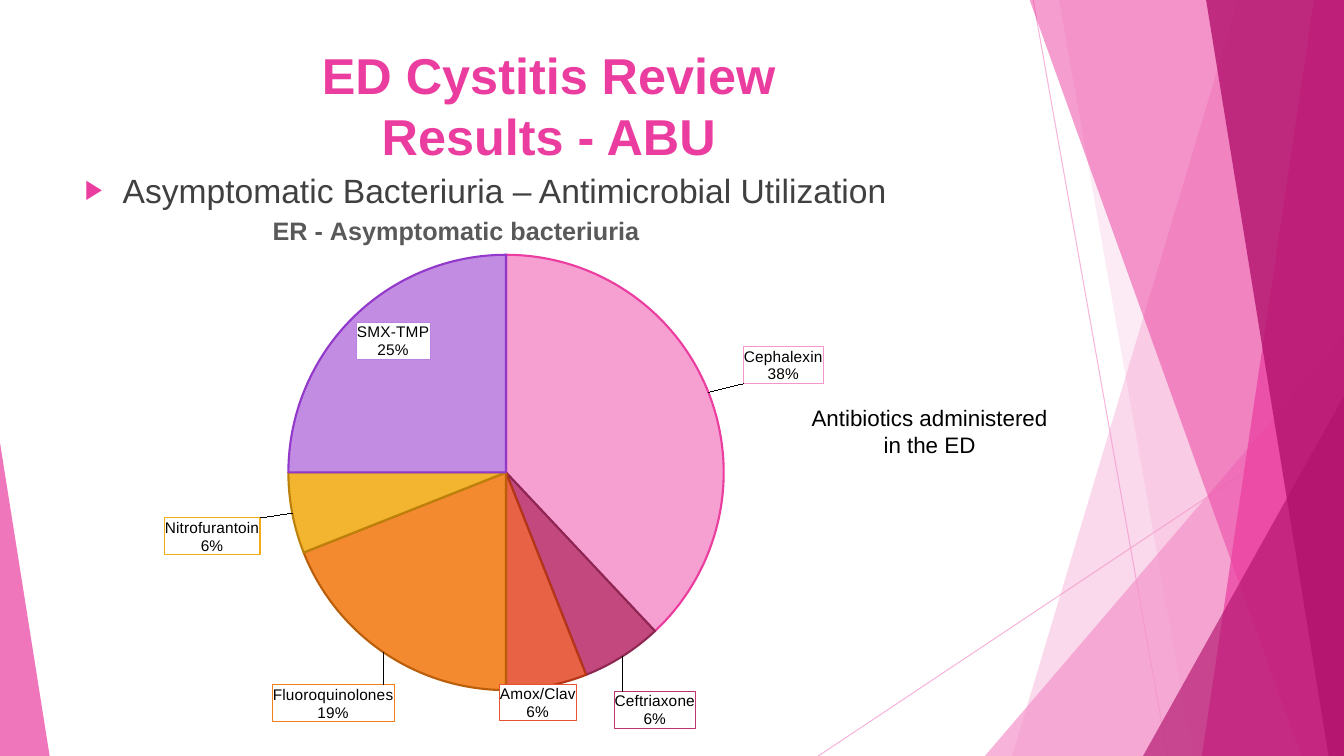
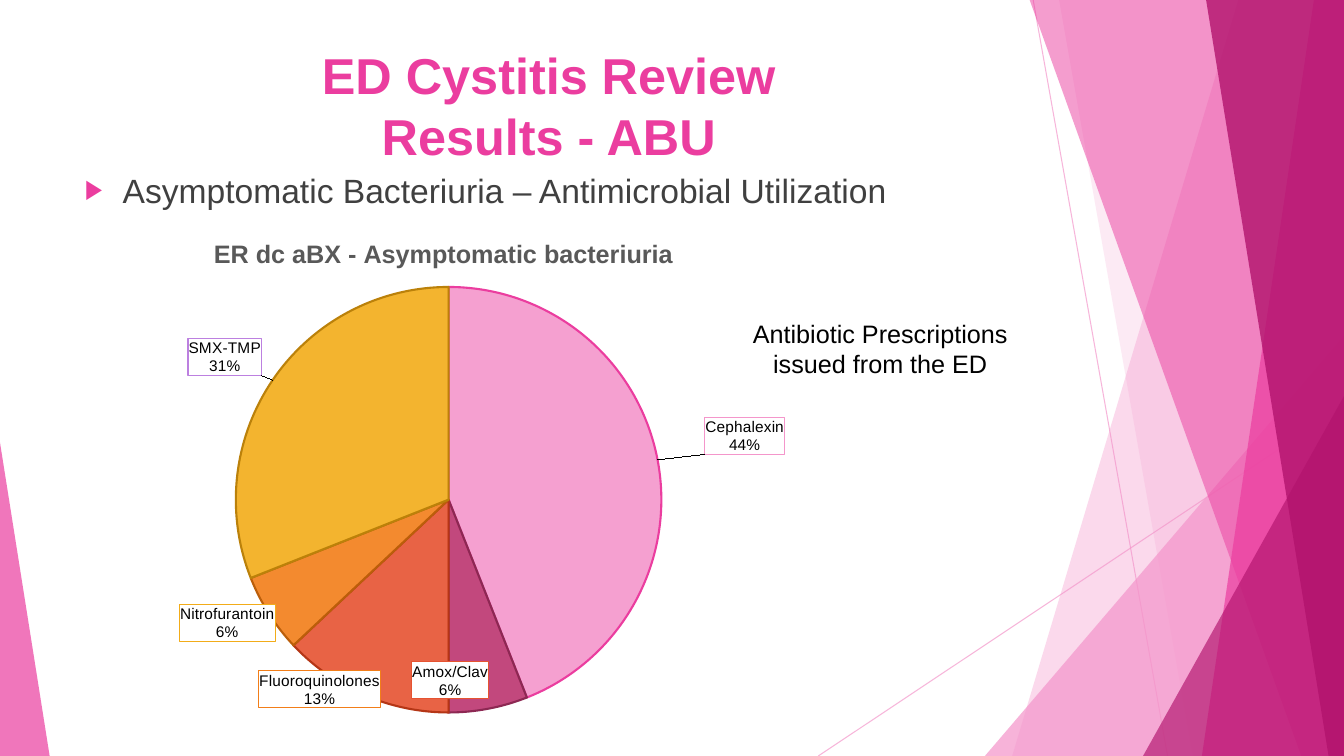
from dataclasses import dataclass
from typing import NamedTuple, Optional

from pptx import Presentation
from pptx import util as u
from pptx.chart import data as chart_data
from pptx.dml import color
from pptx.enum import chart as charts, shapes, text
from pptx.oxml import parse_xml
from pptx.oxml.ns import nsdecls, qn

Pt = u.Pt
WIDTH, HEIGHT = 960, 540
FONT = "Arial"
LIGHT, PINK, DEEP = "F496CB", "EB3D9F", "B2136D"
BODY, CAPTION, BLACK, WHITE = "404040", "595959", "000000", "FFFFFF"


class Box(NamedTuple):
    left: float
    top: float
    width: float
    height: float

    def lengths(self) -> list:
        return [Pt(value) for value in self]


class Ray(NamedTuple):
    x1: float
    y1: float
    x2: float
    y2: float


class Band(NamedTuple):
    """A band whose slanted left edge runs down the slide; it ends at the right edge."""
    top_x: float
    bottom_x: float
    hue: str
    opacity: int


class Wedge(NamedTuple):
    box: Box
    apex: float
    hue: str
    opacity: int


class Slice(NamedTuple):
    drug: str
    percent: int
    shift: Optional[tuple] = None  # label shift in points


@dataclass
class PieSlide:
    heading: str
    heading_at: tuple
    frame: Box
    centre: tuple
    diameter: float
    slices: list
    note: str
    note_box: Box
    note_size: int


RAYS = [Ray(738, 0, 834, 540), Ray(960, 290, 584.5, 540)]
FACETS = [
    Band(884.5, 723, LIGHT, 36),
    Band(756.5, 852, LIGHT, 20),
    Wedge(Box(703.5, 240, 256.5, 300), 1, LIGHT, 72),
    Band(735.5, 929.5, PINK, 50),
    Band(938.5, 858.5, PINK, 70),
    Band(861.5, 949, DEEP, 80),
    Wedge(Box(816.5, 283, 143.5, 257), 1, DEEP, 66),
    Wedge(Box(0, 316, 35.5, 224), 0, PINK, 70),
]
SLICE_FILLS = [LIGHT, "BC356F", "E65331", "F27E19", "F2AC19", "BC80E0"]
SLICE_EDGES = [PINK, "8D2853", "B53616", "BB5E0A", "BB810A", "9239CB"]
DRUGS = ["Cephalexin", "Ceftriaxone", "Amox/Clav", "Fluoroquinolones",
         "Nitrofurantoin", "SMX-TMP"]
LABEL_EDGES = dict(zip(DRUGS, SLICE_FILLS))

SLIDES = [
    PieSlide(
        "ER - Asymptomatic bacteriuria", (191.5, 150), Box(80, 148, 557, 377),
        (361.5, 337.5), 311,
        [Slice("Cephalexin", 38, (86, -34)), Slice("Ceftriaxone", 6, (54.5, 55)),
         Slice("Amox/Clav", 6, (22, 29)), Slice("Fluoroquinolones", 19, (-82, 53)),
         Slice("Nitrofurantoin", 6, (-95.5, 30.5)), Slice("SMX-TMP", 25)],
        "Antibiotics administered in the ED", Box(571.5, 285, 185, 46), 16),
    PieSlide(
        "ER dc aBX - Asymptomatic bacteriuria", (149.5, 166), Box(70, 154, 502, 369),
        (320.5, 357), 304,
        [Slice("Cephalexin", 44, (95, -31)), Slice("Amox/Clav", 6, (1, -3)),
         Slice("Fluoroquinolones", 13, (-77, 13)), Slice("Nitrofurantoin", 6, (-67.5, 22)),
         Slice("SMX-TMP", 31, (-64, -32))],
        "Antibiotic Prescriptions issued from the ED", Box(520, 224, 217.5, 51), 18),
]


def rgb(hue: str) -> color.RGBColor:
    return color.RGBColor.from_string(hue)


def paint(fill, hue: str, opacity: int = 100) -> None:
    fill.solid()
    fill.fore_color.rgb = rgb(hue)
    if opacity < 100:
        tint = fill._xPr.find(qn("a:solidFill")).find(qn("a:srgbClr"))
        tint.append(parse_xml(f'<a:alpha {nsdecls("a")} val="{opacity * 1000}"/>'))


def style(font, size: float, hue: str, bold: bool = False) -> None:
    font.name, font.size, font.bold = FONT, Pt(size), bold
    font.color.rgb = rgb(hue)


def draw_ray(slide, ray: Ray) -> None:
    line = slide.shapes.add_connector(shapes.MSO_CONNECTOR.STRAIGHT, *map(Pt, ray))
    line.line.width = Pt(0.75)
    paint(line.line.fill, LIGHT, 70)
    line._element.spPr.append(parse_xml(f'<a:effectLst {nsdecls("a")}/>'))


def draw_facet(slide, facet) -> None:
    if isinstance(facet, Band):
        outline = slide.shapes.build_freeform(Pt(facet.top_x), 0, scale=1.0)
        corners = [(WIDTH, 0), (WIDTH, HEIGHT), (facet.bottom_x, HEIGHT)]
        outline.add_line_segments([(Pt(x), Pt(y)) for x, y in corners], close=True)
        shape = outline.convert_to_shape()
    else:
        shape = slide.shapes.add_shape(
            shapes.MSO_SHAPE.ISOSCELES_TRIANGLE, *facet.box.lengths())
        shape.adjustments[0] = facet.apex
    shape.shadow.inherit = False
    shape.line.fill.background()
    paint(shape.fill, facet.hue, facet.opacity)


def add_words(slide, box: Box, words: str, size: float, hue: str, bold: bool = False,
              align=text.PP_ALIGN.CENTER, anchor=text.MSO_ANCHOR.TOP):
    """Add a one-paragraph text box and return the paragraph."""
    frame = slide.shapes.add_textbox(*box.lengths()).text_frame
    frame.word_wrap = True
    frame.vertical_anchor = anchor
    frame.text = words
    paragraph = frame.paragraphs[0]
    paragraph.alignment = align
    for run in paragraph.runs:
        style(run.font, size, hue, bold)
    return paragraph


def add_bullet(paragraph) -> None:
    paragraph.space_before = Pt(10)
    props = paragraph._p.get_or_add_pPr()
    props.set("marL", str(Pt(27)))
    props.set("indent", str(-Pt(27)))
    for part in (f'<a:buClr {nsdecls("a")}><a:srgbClr val="{PINK}"/></a:buClr>',
                 f'<a:buSzPct {nsdecls("a")} val="80000"/>',
                 f'<a:buFont {nsdecls("a")} typeface="{FONT}"/>',
                 f'<a:buChar {nsdecls("a")} char="▶"/>'):
        props.append(parse_xml(part))


def layout_xml(x: float, y: float, size: Optional[tuple] = None, edge: bool = True) -> str:
    """Manual chart layout in fractions; without edge, x and y are shifts."""
    modes = '<c:xMode val="edge"/><c:yMode val="edge"/>' if edge else ""
    target = '<c:layoutTarget val="inner"/>' if size else ""
    extent = f'<c:w val="{size[0]:.4f}"/><c:h val="{size[1]:.4f}"/>' if size else ""
    return (f'<c:layout {nsdecls("c")}><c:manualLayout>{target}{modes}'
            f'<c:x val="{x:.4f}"/><c:y val="{y:.4f}"/>{extent}'
            '</c:manualLayout></c:layout>')


def label_xml(index: int, part: Slice, frame: Box) -> str:
    layout = ""
    if part.shift:
        dx, dy = part.shift
        layout = layout_xml(dx / frame.width, dy / frame.height, edge=False)
    return f'''<c:dLbl {nsdecls("c", "a")}><c:idx val="{index}"/>{layout}
<c:spPr><a:solidFill><a:srgbClr val="{WHITE}"/></a:solidFill>
<a:ln w="{Pt(0.75)}"><a:solidFill><a:srgbClr val="{LABEL_EDGES[part.drug]}"/></a:solidFill></a:ln></c:spPr>
<c:txPr><a:bodyPr/><a:p><a:pPr><a:defRPr sz="1100" b="0">
<a:solidFill><a:srgbClr val="{BLACK}"/></a:solidFill><a:latin typeface="{FONT}"/>
</a:defRPr></a:pPr><a:endParaRPr lang="en-US"/></a:p></c:txPr>
<c:dLblPos val="inEnd"/><c:showLegendKey val="0"/><c:showVal val="0"/>
<c:showCatName val="1"/><c:showSerName val="0"/><c:showPercent val="1"/>
<c:showBubbleSize val="0"/><c:separator>\n</c:separator></c:dLbl>'''


def place_chart_parts(chart, page: PieSlide) -> None:
    """Fix the places of the chart heading and of the pie."""
    frame = page.frame
    x, y = page.heading_at
    title = chart.chart_title._element
    plot_area = chart._chartSpace.chart.plotArea
    for parent in (title, plot_area):
        for old in parent.findall(qn("c:layout")):
            parent.remove(old)
    title.find(qn("c:tx")).addnext(parse_xml(layout_xml(
        (x - frame.left) / frame.width, (y - frame.top) / frame.height)))
    left, top = (middle - page.diameter / 2 for middle in page.centre)
    plot_area.insert(0, parse_xml(layout_xml(
        (left - frame.left) / frame.width, (top - frame.top) / frame.height,
        (page.diameter / frame.width, page.diameter / frame.height))))


def add_pie(slide, page: PieSlide) -> None:
    usage = chart_data.CategoryChartData()
    usage.categories = [part.drug for part in page.slices]
    usage.add_series("Series 1", [part.percent for part in page.slices])
    chart = slide.shapes.add_chart(
        charts.XL_CHART_TYPE.PIE, *page.frame.lengths(), usage).chart
    chart.has_legend = False
    style(chart.font, 10, BLACK)
    chart.has_title = True
    heading = chart.chart_title.text_frame
    heading.text = page.heading
    style(heading.paragraphs[0].runs[0].font, 18, CAPTION, bold=True)
    place_chart_parts(chart, page)

    chart.plots[0].vary_by_categories = True
    series = chart.plots[0].series[0]
    labels = series.data_labels
    labels.show_value = False
    labels.show_category_name = labels.show_percentage = True
    labels.position = charts.XL_LABEL_POSITION.INSIDE_END
    style(labels.font, 11, BLACK)
    for index, part in enumerate(page.slices):
        look = series.points[index].format
        paint(look.fill, SLICE_FILLS[index], 90)
        look.line.width = Pt(1.5)
        paint(look.line.fill, SLICE_EDGES[index])
        labels._element.insert(index, parse_xml(label_xml(index, part, page.frame)))


def add_page(deck, page: PieSlide) -> None:
    slide = deck.slides.add_slide(deck.slide_layouts[6])
    for ray in RAYS:
        draw_ray(slide, ray)
    for facet in FACETS:
        draw_facet(slide, facet)
    add_words(slide, Box(53.5, 26, 677, 98), "ED Cystitis Review\vResults - ABU", 36, PINK,
              bold=True, anchor=text.MSO_ANCHOR.MIDDLE)
    add_bullet(add_words(slide, Box(53.5, 117.5, 677, 394),
                         "Asymptomatic Bacteriuria – Antimicrobial Utilization",
                         24, BODY, align=text.PP_ALIGN.LEFT))
    add_pie(slide, page)
    add_words(slide, page.note_box, page.note, page.note_size, BLACK)


def main() -> None:
    deck = Presentation()
    deck.slide_width, deck.slide_height = Pt(WIDTH), Pt(HEIGHT)
    for page in SLIDES:
        add_page(deck, page)
    deck.save("out.pptx")


if __name__ == "__main__":
    main()
